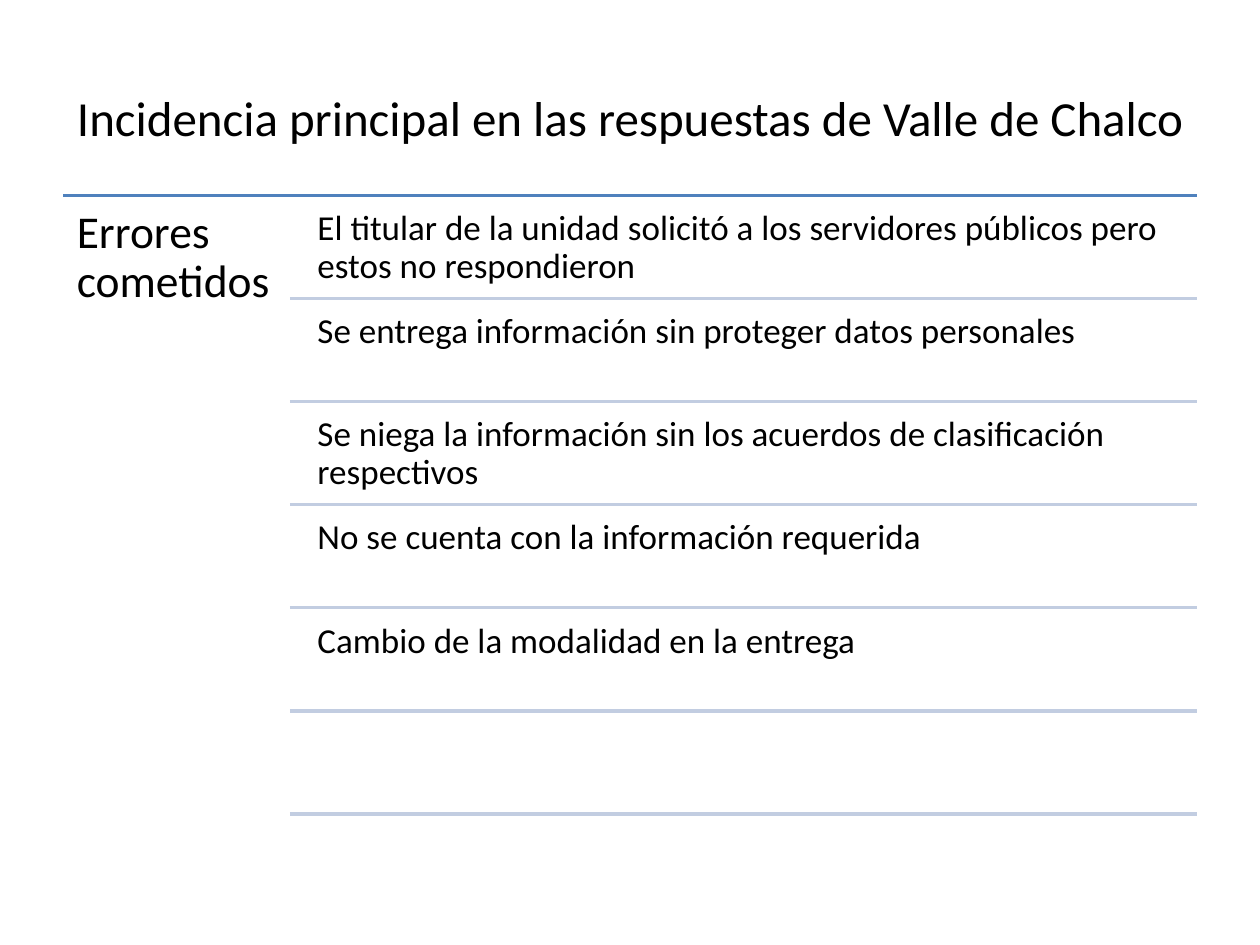
from dataclasses import dataclass

from lxml.etree import SubElement
from pptx import Presentation
from pptx.dml.color import RGBColor
from pptx.enum.shapes import MSO_CONNECTOR as Connector
from pptx.enum.text import MSO_ANCHOR as Anchor, PP_ALIGN as Align
from pptx.oxml.ns import qn
from pptx.util import Inches, Pt


@dataclass(frozen=True)
class Theme:
    font: str = "Calibri"
    text: str = "000000"
    main_rule: str = "4F81BD"
    row_rule: str = "C2CDE1"
    rule_width: float = 2
    title_size: int = 28
    heading_size: int = 26
    row_size: int = 20
    line_spacing: float = 0.9


class SlideBuilder:
    def __init__(self, slide, theme):
        self.slide = slide
        self.theme = theme

    def add_run(self, paragraph, text, size):
        run = paragraph.add_run()
        run.text = text
        run.font.name = self.theme.font
        run.font.size = Pt(size)
        run.font.color.rgb = RGBColor.from_string(self.theme.text)

    def title(self, text, left, top, width, height):
        shape = self.slide.shapes.title
        shape.left, shape.top = Inches(left), Inches(top)
        shape.width, shape.height = Inches(width), Inches(height)
        frame = shape.text_frame
        frame.vertical_anchor = Anchor.MIDDLE
        paragraph = frame.paragraphs[0]
        paragraph.alignment = Align.CENTER
        self.add_run(paragraph, text, self.theme.title_size)

    def text_box(self, text, left, top, width, height, size, inset):
        shape = self.slide.shapes.add_textbox(
            Inches(left), Inches(top), Inches(width), Inches(height))
        frame = shape.text_frame
        frame.word_wrap = True
        frame.vertical_anchor = Anchor.TOP
        frame.margin_left = frame.margin_right = Inches(inset)
        frame.margin_top = frame.margin_bottom = Inches(inset)
        paragraph = frame.paragraphs[0]
        paragraph.line_spacing = self.theme.line_spacing
        self.add_run(paragraph, text, size)

    def rule(self, left, right, top, color):
        connector = self.slide.shapes.add_connector(
            Connector.STRAIGHT, Inches(left), Inches(top), Inches(right), Inches(top))
        connector.line.color.rgb = RGBColor.from_string(color)
        connector.line.width = Pt(self.theme.rule_width)
        # An empty effect list turns off the theme shadow
        SubElement(connector._element.spPr, qn("a:effectLst"))


ERRORS = [
    "El titular de la unidad solicitó a los servidores públicos pero estos no respondieron",
    "Se entrega información sin proteger datos personales",
    "Se niega la información sin los acuerdos de clasificación respectivos",
    "No se cuenta con la información requerida",
    "Cambio de la modalidad en la entrega",
]

# Layout in inches
LEFT, RIGHT = 0.5, 9.5
LIST_TOP, LIST_BOTTOM = 1.55, 6.46
HEADING_WIDTH = 1.8
ROW_COUNT = 6  # the last row stays empty
ROW_PITCH = (LIST_BOTTOM - LIST_TOP) / ROW_COUNT
ROW_GAP = 0.04


def main():
    presentation = Presentation()
    presentation.slide_width, presentation.slide_height = Inches(10), Inches(7.5)
    theme = Theme()
    slide = presentation.slides.add_slide(presentation.slide_layouts[5])
    builder = SlideBuilder(slide, theme)

    # Title
    builder.title("Incidencia principal en las respuestas de Valle de Chalco",
                  LEFT, 0.3, RIGHT - LEFT, 1.25)

    # Heading column under the main rule
    builder.rule(LEFT, RIGHT, LIST_TOP, theme.main_rule)
    builder.text_box("Errores cometidos", LEFT, LIST_TOP, HEADING_WIDTH, 4.95,
                     theme.heading_size, 0.11)

    # Error rows, each closed by a rule
    row_left = LEFT + HEADING_WIDTH
    for index in range(ROW_COUNT):
        top = LIST_TOP + index * ROW_PITCH
        if index < len(ERRORS):
            builder.text_box(ERRORS[index], row_left + 0.14, top + ROW_GAP, 7.07,
                             ROW_PITCH - ROW_GAP, theme.row_size, 0.08)
        builder.rule(row_left, RIGHT, top + ROW_PITCH, theme.row_rule)

    presentation.save("out.pptx")


if __name__ == "__main__":
    main()
